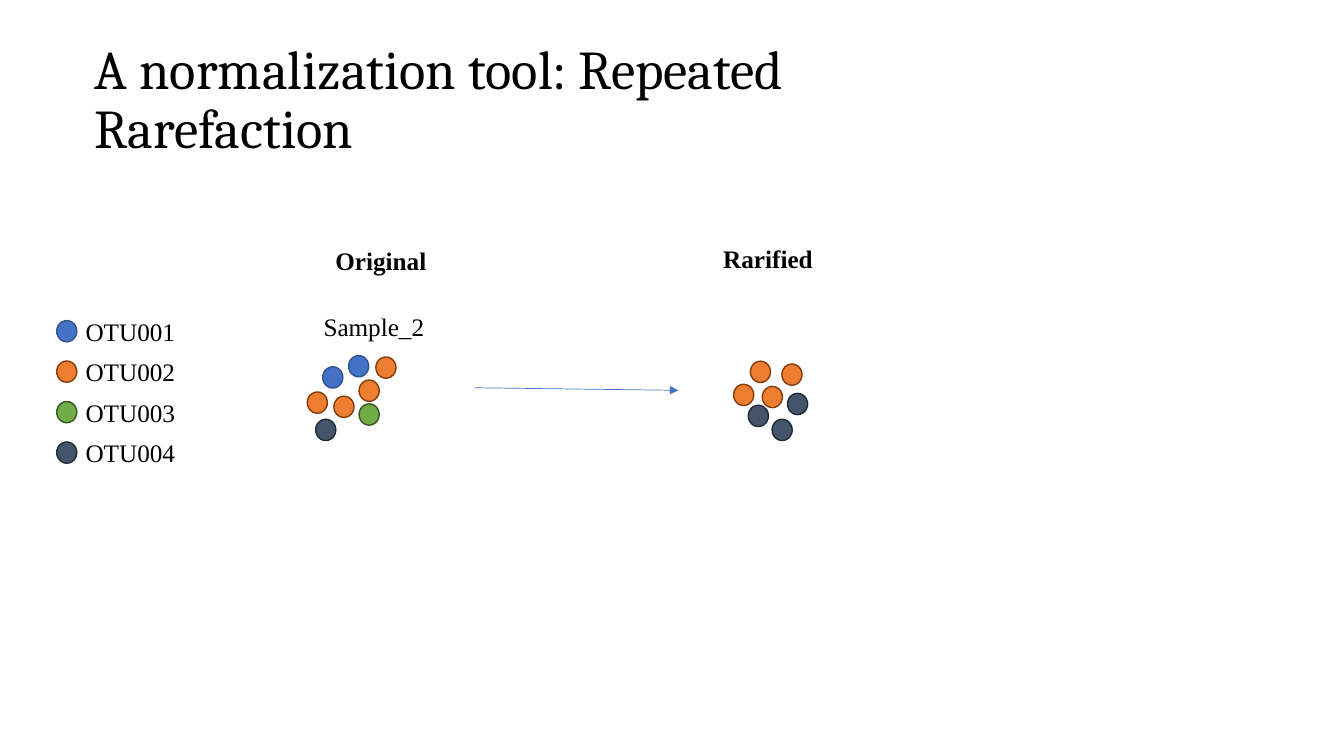
"""Build the repeated rarefaction slide."""
from lxml import etree
from pptx import Presentation
from pptx.dml.color import RGBColor
from pptx.enum import shapes, text
from pptx.oxml import ns
from pptx.util import Pt

BLACK = RGBColor(0x00, 0x00, 0x00)
BLUE = RGBColor(0x44, 0x72, 0xC4)
BLUE_EDGE = RGBColor(0x32, 0x54, 0x91)
ORANGE = RGBColor(0xED, 0x7D, 0x31)
ORANGE_EDGE = RGBColor(0x84, 0x3C, 0x0B)
GREEN = RGBColor(0x70, 0xAD, 0x47)
GREEN_EDGE = RGBColor(0x38, 0x57, 0x23)
SLATE = RGBColor(0x44, 0x54, 0x6A)
SLATE_EDGE = RGBColor(0x22, 0x2A, 0x35)

OTU_COLORS = {
    "OTU001": (BLUE, BLUE_EDGE),
    "OTU002": (ORANGE, ORANGE_EDGE),
    "OTU003": (GREEN, GREEN_EDGE),
    "OTU004": (SLATE, SLATE_EDGE),
}
ORIGINAL_READS = {
    "OTU001": [(230.5, 262), (249, 254)],
    "OTU002": [(268.5, 255), (256.5, 271.5), (219.5, 280), (238.5, 283)],
    "OTU003": [(256.5, 288.5)],
    "OTU004": [(225.5, 299.5)],
}
RARIFIED_READS = {
    "OTU004": [(534.5, 289.5), (562.5, 281), (551.5, 299.5)],
    "OTU002": [(558.5, 260), (536, 258), (524, 274.5), (544.5, 276)],
}
LEGEND_TOP = 229
LEGEND_PITCH = 28.9


def set_title(slide, wording):
    """Place and format the title placeholder."""
    title = slide.shapes.title
    title.left, title.top, title.width, title.height = Pt(60.5), Pt(43.2), Pt(699), Pt(58.3)
    frame = title.text_frame
    frame.text = wording
    frame.word_wrap = True
    frame.auto_size = text.MSO_AUTO_SIZE.NONE
    frame.vertical_anchor = text.MSO_ANCHOR.MIDDLE
    heading = frame.paragraphs[0]
    heading.alignment = text.PP_ALIGN.LEFT
    heading.line_spacing = 0.9
    format_run(heading.runs[0], "Cambria", 39)


def format_run(run, typeface, size, bold=False):
    """Set the font of a run."""
    run.font.name = typeface
    run.font.size = Pt(size)
    run.font.bold = bold
    run.font.color.rgb = BLACK


def add_label(slide, wording, left, top, bold=False):
    """Add a one-line label."""
    label = slide.shapes.add_textbox(Pt(left), Pt(top), Pt(104.4), Pt(29))
    label.text_frame.word_wrap = True
    label.text_frame.text = wording
    format_run(label.text_frame.paragraphs[0].runs[0], "Times New Roman", 18, bold)


def add_read(slide, otu, left, top):
    """Add one dot in the colours of its OTU."""
    fill, edge = OTU_COLORS[otu]
    read = slide.shapes.add_shape(
        shapes.MSO_SHAPE.OVAL, Pt(left), Pt(top), Pt(14.4), Pt(15.2))
    read.shadow.inherit = False
    read.fill.solid()
    read.fill.fore_color.rgb = fill
    read.line.color.rgb = edge
    read.line.width = Pt(1)


def add_sample(slide, reads):
    """Add all dots of one sample."""
    for otu, places in reads.items():
        for left, top in places:
            add_read(slide, otu, left, top)


def add_legend(slide):
    """Add a dot and a name for each OTU."""
    for row, otu in enumerate(OTU_COLORS):
        top = LEGEND_TOP + row * LEGEND_PITCH
        add_read(slide, otu, 40.5, top)
        add_label(slide, otu, 54, top - 6.7)


def add_arrow(slide, start, end):
    """Add a thin arrow from start to end."""
    arrow = slide.shapes.add_connector(
        shapes.MSO_CONNECTOR.STRAIGHT, *map(Pt, start + end))
    arrow.line.color.rgb = BLUE
    arrow.line.width = Pt(0.5)
    outline = arrow.line._get_or_add_ln()
    etree.SubElement(outline, ns.qn("a:tailEnd"), type="triangle")
    etree.SubElement(arrow._element.spPr, ns.qn("a:effectLst"))


def main():
    """Build and save the slide."""
    deck = Presentation()
    deck.slide_width, deck.slide_height = Pt(960), Pt(540)
    slide = deck.slides.add_slide(deck.slide_layouts[5])
    set_title(slide, "A normalization tool: Repeated Rarefaction")
    add_legend(slide)
    add_label(slide, "Original", 232.5, 171.5, bold=True)
    add_label(slide, "Sample_2", 224, 218.5)
    add_sample(slide, ORIGINAL_READS)
    add_arrow(slide, (339, 277), (484.5, 278.8))
    add_label(slide, "Rarified", 509.5, 170.5, bold=True)
    add_sample(slide, RARIFIED_READS)
    deck.save("out.pptx")


if __name__ == "__main__":
    main()
